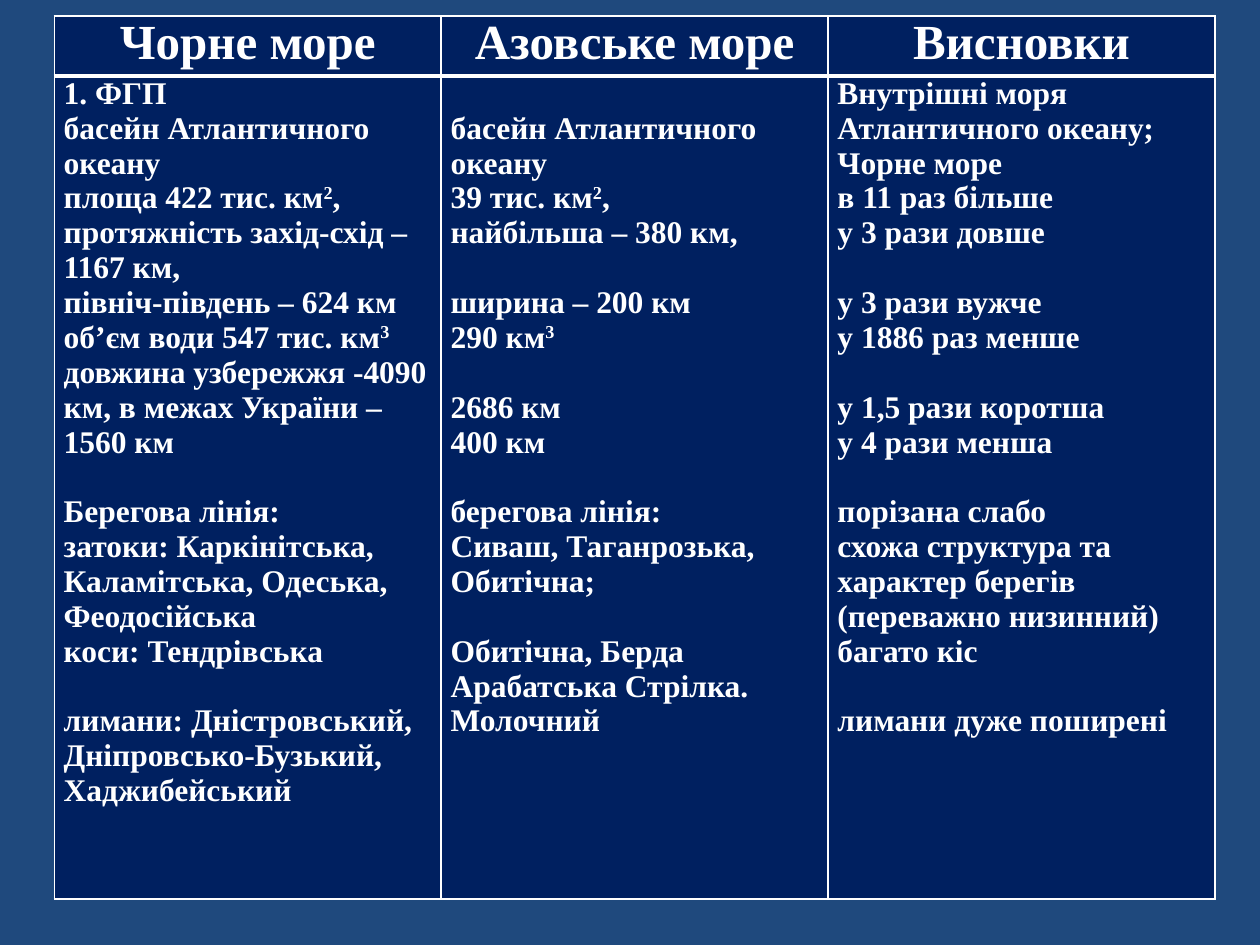
from itertools import product

from lxml.etree import SubElement
from pptx import Presentation
from pptx.dml.color import RGBColor as RGB
from pptx.enum.text import PP_ALIGN as Align
from pptx.oxml.ns import qn
from pptx.util import Pt

COLORS = {"back": "1F497D", "cell": "002060", "line": "FFFFFF", "text": "FFFFFF"}
FONT = "Times New Roman"
GAP = 19.93  # one line of 18 pt text
POWERS = {"²": "2", "³": "3"}

HEADS = ["Чорне море", "Азовське море", "Висновки"]
# None leaves a line free above the next paragraph
BODY = [
    ["1. ФГП", "басейн Атлантичного океану", "площа 422 тис. км²,",
     "протяжність захід-схід – 1167 км,", "північ-південь – 624 км",
     "об’єм води 547 тис. км³",
     "довжина узбережжя -4090 км, в межах України – 1560 км",
     None, "Берегова лінія:",
     "затоки: Каркінітська, Каламітська, Одеська, Феодосійська",
     "коси: Тендрівська",
     None, "лимани: Дністровський, Дніпровсько-Бузький, Хаджибейський"],
    [None, "басейн Атлантичного океану", "39 тис. км²,", "найбільша – 380 км,",
     None, "ширина – 200 км", "290 км³",
     None, "2686 км", "400 км",
     None, "берегова лінія:", "Сиваш, Таганрозька, Обитічна;",
     None, "Обитічна, Берда Арабатська Стрілка.", "Молочний"],
    ["Внутрішні моря Атлантичного океану;", "Чорне море", "в 11 раз більше",
     "у 3 рази довше",
     None, "у 3 рази вужче", "у 1886 раз менше",
     None, "у 1,5 рази коротша", "у 4 рази менша",
     None, "порізана слабо",
     "схожа структура та характер берегів (переважно низинний)", "багато кіс",
     None, "лимани дуже поширені"],
]


def add_text(para, text, size):
    """Fill a paragraph, raising the powers in it."""
    for mark in POWERS:
        text = text.replace(mark, f"|{mark}|")
    for part in filter(None, text.split("|")):
        run = para.add_run()
        run.text = POWERS.get(part, part)
        font = run.font
        font.name, font.size, font.bold = FONT, Pt(size), True
        font.color.rgb = RGB.from_string(COLORS["text"])
        if part in POWERS:
            run._r.get_or_add_rPr().set("baseline", "30000")


def add_line(cell, side, width):
    props = cell._tc.get_or_add_tcPr()
    line = SubElement(props, qn(f"a:ln{side}"), w=str(Pt(width)))
    fill = SubElement(line, qn("a:solidFill"))
    SubElement(fill, qn("a:srgbClr"), val=COLORS["line"])


prs = Presentation()
prs.slide_width, prs.slide_height = Pt(720), Pt(540)
slide = prs.slides.add_slide(prs.slide_layouts[6])
slide.background.fill.solid()
slide.background.fill.fore_color.rgb = RGB.from_string(COLORS["back"])

frame = slide.shapes.add_table(2, 3, Pt(31), Pt(9), Pt(663.3), Pt(504.7))
table = frame.table
table.first_row = table.horz_banding = False
for col in table.columns:
    col.width = Pt(221.1)
table.rows[0].height, table.rows[1].height = Pt(34.5), Pt(470.2)

for row, col in product(range(2), range(3)):
    cell = table.cell(row, col)
    cell.margin_left = cell.margin_right = Pt(5.4)
    cell.margin_top = cell.margin_bottom = 0
    widths = {"L": 1, "R": 1, "T": 3 if row else 1, "B": 1 if row else 3}
    for side, width in widths.items():
        add_line(cell, side, width)
    cell.fill.solid()
    cell.fill.fore_color.rgb = RGB.from_string(COLORS["cell"])

for col, head in enumerate(HEADS):
    para = table.cell(0, col).text_frame.paragraphs[0]
    para.alignment = Align.CENTER
    add_text(para, head, 28)

for col, texts in enumerate(BODY):
    cell = table.cell(1, col)
    if texts[0] is None:
        cell.margin_top = Pt(GAP)
        texts = texts[1:]
    box = cell.text_frame
    for i, text in enumerate(texts):
        if text is None:
            continue
        para = box.add_paragraph() if i else box.paragraphs[0]
        if i and texts[i - 1] is None:
            para.space_before = Pt(GAP)
        add_text(para, text, 18)

prs.save("out.pptx")
